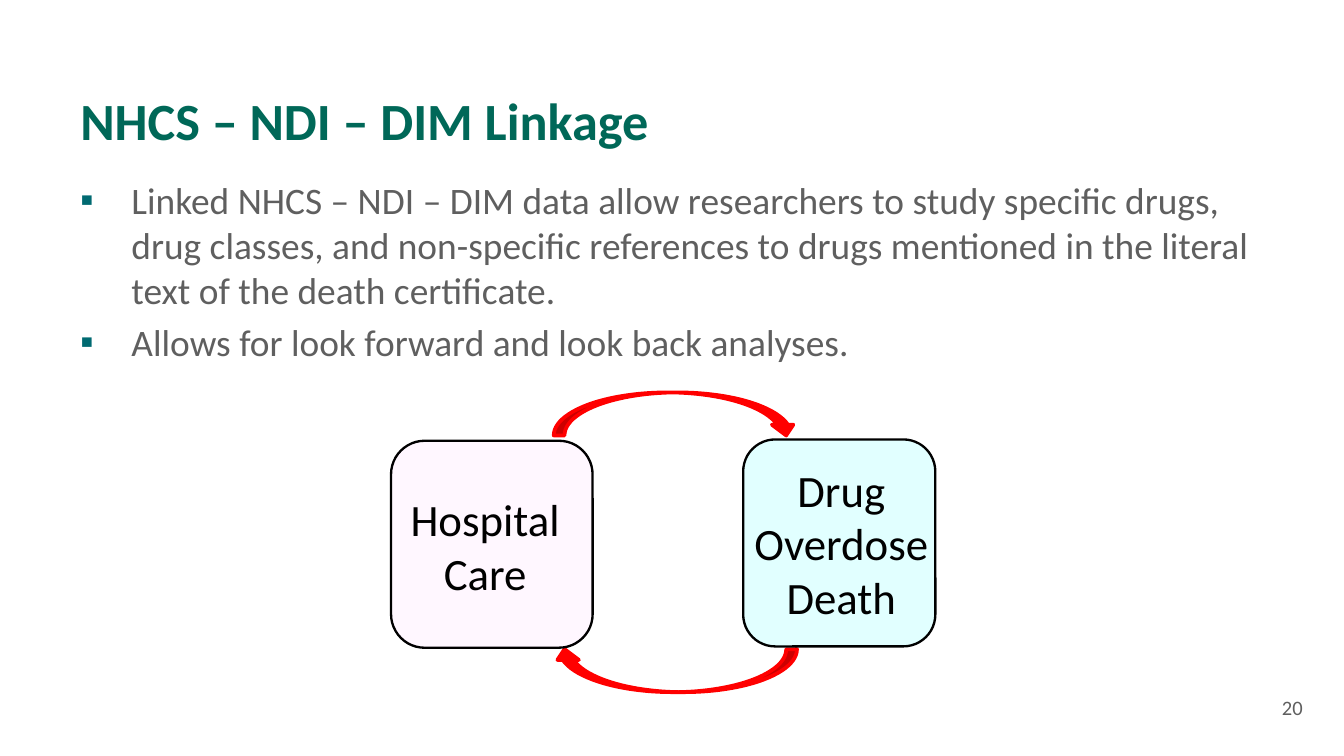
from lxml import etree
from pptx import Presentation
from pptx.dml.color import RGBColor
from pptx.enum.shapes import MSO_SHAPE
from pptx.enum.text import MSO_ANCHOR, PP_ALIGN
from pptx.oxml.ns import qn
from pptx.util import Inches, Pt

ROUNDED = MSO_SHAPE.ROUNDED_RECTANGLE
CURVED_ARROW = MSO_SHAPE.CURVED_DOWN_ARROW
TOP, BOTTOM = MSO_ANCHOR.TOP, MSO_ANCHOR.BOTTOM
LEFT, CENTER = PP_ALIGN.LEFT, PP_ALIGN.CENTER

FONT = "Calibri"
GREEN, TEAL, GRAY = "006858", "006A71", "5F5F5F"
BLACK, RED = "000000", "FF0000"

# Content; boxes are (left, top, width, height) in inches
TITLE = "NHCS – NDI – DIM Linkage"
POINTS = [
    "Linked NHCS – NDI – DIM data allow researchers to study specific drugs, "
    "drug classes, and non-specific references to drugs mentioned in the "
    "literal text of the death certificate.",
    "Allows for look forward and look back analyses.",
]
PAGE_NUMBER = "20"
STAGES = [  # label, label box, card box, card fill
    ("Hospital Care", (2.91, 3.61, 1.4, 0.91), (2.91, 3.28, 1.5, 1.54), "FFF7FF"),
    ("Drug Overdose Death", (5.49, 3.39, 1.54, 1.31), (5.53, 3.27, 1.43, 1.54), "E1FFFF"),
]
ARROWS = [(2.92, 0), (4.83, 180)]  # top, rotation: look forward, look back


def color(hex_value):
    return RGBColor.from_string(hex_value)


def add_text(slide, box, lines, size, hex_value, bold=False, align=LEFT, anchor=TOP):
    frame = slide.shapes.add_textbox(*map(Inches, box)).text_frame
    frame.word_wrap = True
    frame.vertical_anchor = anchor
    frame.text = "\n".join(lines)
    for paragraph in frame.paragraphs:
        paragraph.alignment = align
        font = paragraph.runs[0].font
        font.name, font.size, font.bold = FONT, Pt(size), bold
        font.color.rgb = color(hex_value)
    return frame


def add_bullet(paragraph, hex_value):
    properties = paragraph._p.get_or_add_pPr()
    properties.set("marL", str(Inches(0.38)))
    properties.set("indent", str(Inches(-0.38)))
    bullet_color = etree.SubElement(properties, qn("a:buClr"))
    etree.SubElement(bullet_color, qn("a:srgbClr"), val=hex_value)
    etree.SubElement(properties, qn("a:buFont"), typeface=FONT)
    etree.SubElement(properties, qn("a:buChar"), char="▪")


def add_figure(slide, kind, box, fill, line, line_width):
    figure = slide.shapes.add_shape(kind, *map(Inches, box))
    figure.shadow.inherit = False
    figure.fill.solid()
    figure.fill.fore_color.rgb = color(fill)
    figure.line.color.rgb = color(line)
    figure.line.width = Pt(line_width)
    return figure


def main():
    prs = Presentation()
    prs.slide_width = Inches(10)
    prs.slide_height = Inches(10 * 9 / 16)  # widescreen 16:9
    slide = prs.slides.add_slide(prs.slide_layouts[6])

    # Page number, title and bullet points
    add_text(slide, (9.44, 5.12, 0.41, 0.29), [PAGE_NUMBER], 11, GRAY)
    title = add_text(slide, (0.5, 0.23, 9, 0.94), [TITLE], 28, GREEN, True, anchor=BOTTOM)
    title.paragraphs[0].line_spacing = Pt(30)
    body = add_text(slide, (0.5, 1.27, 9, 3.65), POINTS, 20, GRAY)
    for point in body.paragraphs:
        point.space_before = Pt(4)
        add_bullet(point, TEAL)

    # Cycle between the two stages
    for top, rotation in ARROWS:
        arrow = add_figure(slide, CURVED_ARROW, (4.12, top, 1.81, 0.32), RED, RED, 2)
        arrow.rotation = rotation
    for label, label_box, card_box, fill in STAGES:
        add_figure(slide, ROUNDED, card_box, fill, BLACK, 1.25)
        add_text(slide, label_box, [label], 24, BLACK, align=CENTER)

    prs.save("out.pptx")


if __name__ == "__main__":
    main()
